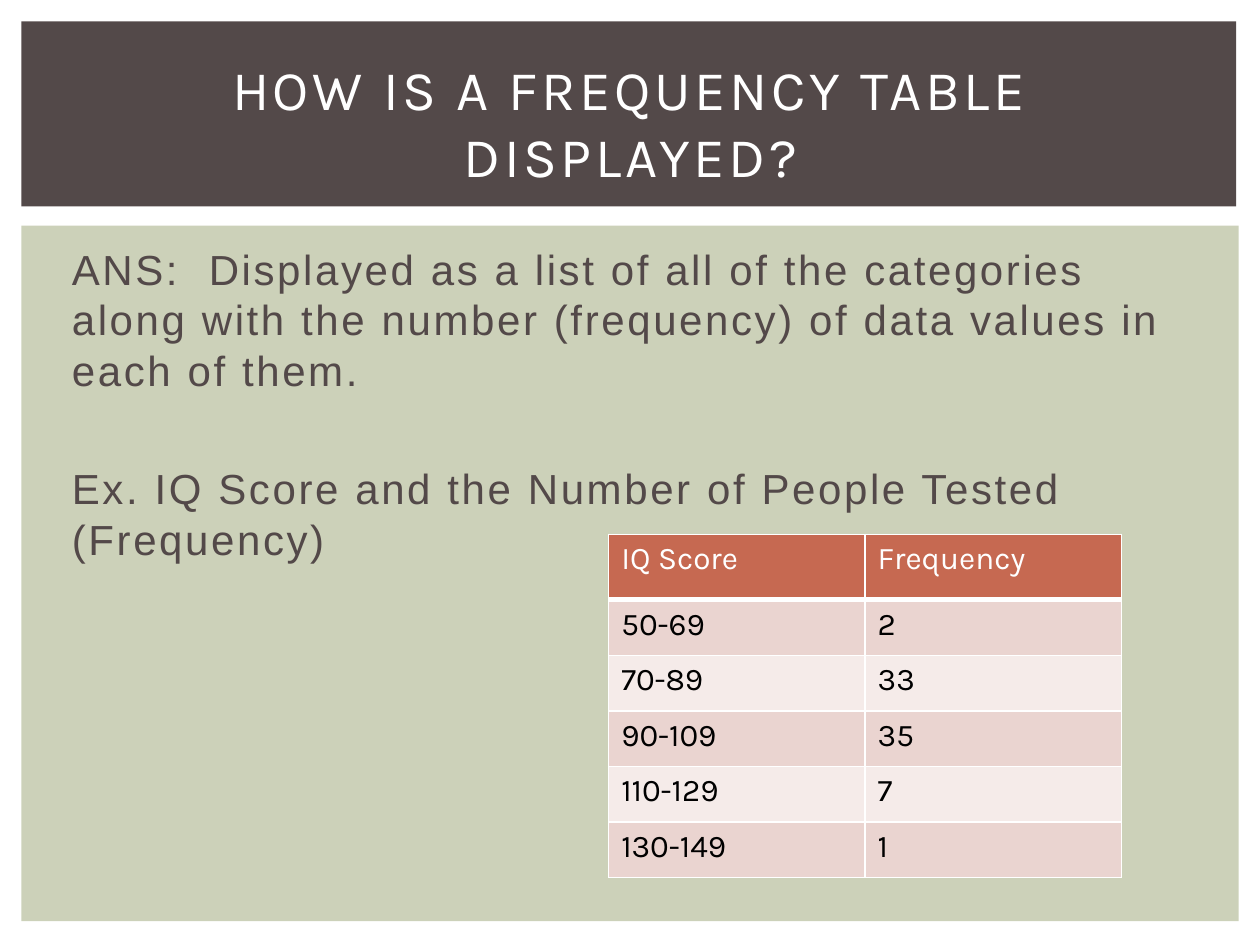
from collections import namedtuple

from lxml import etree
from pptx import Presentation
from pptx.dml.color import RGBColor
from pptx.enum import shapes, text
from pptx.oxml import ns
from pptx.util import Cm, Pt

Box = namedtuple("Box", "left top width height")

DARK, SAGE, WHITE, BLACK = "534949", "CCD1B9", "FFFFFF", "000000"
HEADER, BANDS = "C66951", ("EAD4D0", "F5EBE9")

TITLE = "HOW IS A FREQUENCY TABLE DISPLAYED?"
ANSWER = (
    "ANS:  Displayed as a list of all of the categories along with "
    "the number (frequency) of data values in each of them."
)
EXAMPLE = "Ex. IQ Score and the Number of People Tested (Frequency)"
SCORES = [
    ("IQ Score", "Frequency"),
    ("50-69", "2"),
    ("70-89", "33"),
    ("90-109", "35"),
    ("110-129", "7"),
    ("130-149", "1"),
]


def colour(value):
    return RGBColor.from_string(value)


def format_runs(para, font, size, fill, spacing=0):
    for span in para.runs:
        span.font.name = font
        span.font.size = Pt(size)
        span.font.bold = False
        span.font.color.rgb = colour(fill)
        if spacing:
            span._r.get_or_add_rPr().set("spc", str(round(spacing * 100)))


def add_panel(page, box, fill):
    panel = page.shapes.add_shape(shapes.MSO_SHAPE.RECTANGLE, *map(Cm, box))
    panel.shadow.inherit = False
    panel.fill.solid()
    panel.fill.fore_color.rgb = colour(fill)
    panel.line.fill.background()


def add_text(page, box):
    frame = page.shapes.add_textbox(*map(Cm, box)).text_frame
    frame.word_wrap = True
    return frame


def border_cell(cell, bottom):
    properties = cell._tc.get_or_add_tcPr()
    for side, width in (("L", 1), ("R", 1), ("T", 1), ("B", bottom)):
        line = etree.SubElement(properties, ns.qn(f"a:ln{side}"), w=str(Pt(width)))
        fill = etree.SubElement(line, ns.qn("a:solidFill"))
        etree.SubElement(fill, ns.qn("a:srgbClr"), val=WHITE)


def add_title(page, box):
    add_panel(page, box, DARK)
    frame = add_text(page, Box(box.left + 0.64, box.top + 0.56, 23.29, 2.92))
    frame.vertical_anchor = text.MSO_ANCHOR.MIDDLE
    frame.text = TITLE
    para = frame.paragraphs[0]
    para.alignment = text.PP_ALIGN.CENTER
    format_runs(para, "Karla", 32, WHITE, 2)


def add_scores(page, box):
    table = page.shapes.add_table(len(SCORES), 2, *map(Cm, box)).table
    for column in table.columns:
        column.width = Cm(box.width / 2)
    for index, values in enumerate(SCORES):
        is_header = index == 0
        table.rows[index].height = Cm(1.32 if is_header else 1.12)
        for cell, value in zip(table.rows[index].cells, values):
            cell.text = value
            format_runs(cell.text_frame.paragraphs[0], "Karla", 18,
                        WHITE if is_header else BLACK)
            border_cell(cell, 3 if is_header else 1)
            cell.fill.solid()
            cell.fill.fore_color.rgb = colour(
                HEADER if is_header else BANDS[(index - 1) % 2])


def add_body(page, box):
    add_panel(page, box, SAGE)
    frame = add_text(page, Box(box.left + 0.64, box.top + 0.23, 23.34, 12.24))
    frame.margin_left = Cm(0.38)
    frame.text = f"{ANSWER}\n{EXAMPLE}"
    for para, gap in zip(frame.paragraphs, (4.8, 39)):
        para.space_before = Pt(gap)
        format_runs(para, "Arial", 24, DARK, 1.5)
    add_scores(page, Box(box.left + 11.84, box.top + 6.22, 10.34, 6.92))


def main():
    deck = Presentation()
    deck.slide_width, deck.slide_height = Cm(25.4), Cm(19.05)
    page = deck.slides.add_slide(deck.slide_layouts[6])
    add_body(page, Box(0.43, 4.55, 24.54, 14.02))
    add_title(page, Box(0.43, 0.43, 24.49, 3.73))
    deck.save("out.pptx")


if __name__ == "__main__":
    main()
